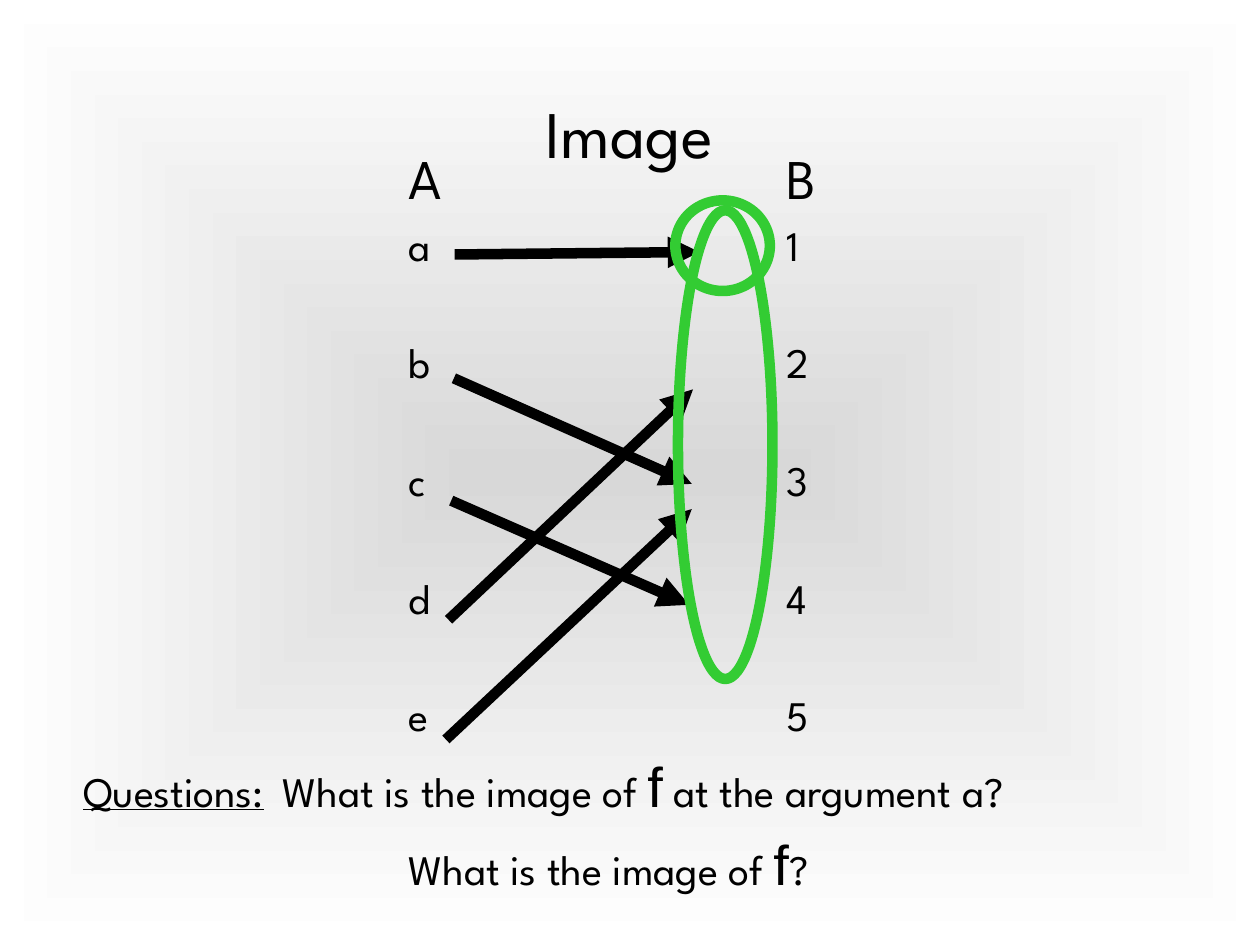
from lxml.etree import SubElement
from pptx import Presentation
from pptx.dml.color import RGBColor
from pptx.enum.shapes import MSO_CONNECTOR, MSO_SHAPE
from pptx.enum.text import MSO_ANCHOR, PP_ALIGN
from pptx.oxml.ns import qn
from pptx.util import Pt

BLACK = RGBColor(0x00, 0x00, 0x00)
GREEN = RGBColor(0x33, 0xCC, 0x33)
GRAY = RGBColor(0xD8, 0xD8, 0xD8)
WHITE = RGBColor(0xFF, 0xFF, 0xFF)
FONT = "League Spartan"
ARROWS = [
    (262.8, 145.4, 399.6, 144),
    (262.1, 217.4, 395.3, 276.5),
    (260.6, 287.3, 393.8, 345.6),
    (258.5, 352.1, 396, 222.5),
    (257, 420.5, 395.3, 290.9),
]
RINGS = [(387.4, 120.2, 54, 267.8), (385.9, 114.5, 54, 51.8)]


def set_back(slide):
    """Fill the background with a gradient from the centre outwards."""
    fill = slide.background.fill
    fill.gradient()
    for stop, color, pos in zip(fill.gradient_stops, (GRAY, WHITE), (0, 1)):
        stop.color.rgb = color
        stop.position = pos
    grad = slide.background._cSld.find(".//" + qn("a:gradFill"))
    grad.remove(grad.find(qn("a:lin")))
    shade = SubElement(grad, qn("a:path"), path="shape")
    SubElement(shade, qn("a:fillToRect"), l="50000", t="50000", r="50000", b="50000")


def style(run, size, name=FONT):
    """Set the font of a run."""
    run.font.size = Pt(size)
    run.font.name = name
    run.font.color.rgb = BLACK


def add_title(slide, text):
    """Place and format the title."""
    title = slide.shapes.title
    title.left, title.top, title.width, title.height = Pt(17.3), Pt(15.1), Pt(684.7), Pt(120.2)
    frame = title.text_frame
    frame.text = text
    frame.vertical_anchor = MSO_ANCHOR.MIDDLE
    frame.paragraphs[0].alignment = PP_ALIGN.CENTER
    style(frame.paragraphs[0].runs[0], 38)


def add_box(slide, left, width):
    """Add a text box in the body of the slide."""
    frame = slide.shapes.add_textbox(Pt(left), Pt(78.5), Pt(width), Pt(447.8)).text_frame
    frame.word_wrap = True
    frame.margin_left = frame.margin_right = Pt(21.6)
    return frame


def add_para(frame, parts, left, hang, gap):
    """Add a paragraph of (text, size, font) parts with an indent and a gap above."""
    para = frame.add_paragraph() if frame.text else frame.paragraphs[0]
    para.space_before = Pt(gap)
    props = para._p.get_or_add_pPr()
    props.set("marL", str(Pt(left)))
    props.set("indent", str(-Pt(hang)))
    for text, size, name in parts:
        run = para.add_run()
        run.text = text
        style(run, size, name)
    return para


def add_set(frame, head, items, left):
    """Add the name of a set and its elements below it."""
    add_para(frame, [(head, 32, FONT)], left, 0, 6.4)
    for num, item in enumerate(items):
        add_para(frame, [(item, 24, FONT)], left, 0, 38.4 if num else 4.8)


def add_asks(frame):
    """Add the two questions."""
    mark = ("f", 32, "Arial")
    ask = "What is the image of "
    first = [("Questions:", 24, FONT), (" \t" + ask, 24, FONT), mark,
             (" at the argument a?", 24, FONT)]
    para = add_para(frame, first, 42, 42, 6.4)
    para.runs[0].font.underline = True
    add_para(frame, [(ask, 24, FONT), mark, ("?", 24, FONT)], 186, 0, 6.4)


def add_arrow(slide, ends):
    """Add a thick black arrow."""
    line = slide.shapes.add_connector(MSO_CONNECTOR.STRAIGHT, *map(Pt, ends))
    line.line.width = Pt(6)
    line.line.color.rgb = BLACK
    edge = line.line._get_or_add_ln()
    edge.set("cap", "sq")
    SubElement(edge, qn("a:tailEnd"), type="triangle")
    SubElement(line._element.spPr, qn("a:effectLst"))


def add_ring(slide, box):
    """Add an unfilled green ellipse."""
    ring = slide.shapes.add_shape(MSO_SHAPE.OVAL, *map(Pt, box))
    ring.shadow.inherit = False
    ring.fill.background()
    ring.line.width = Pt(6)
    ring.line.color.rgb = GREEN


def main():
    """Build and save the slide."""
    deck = Presentation()
    deck.slide_width, deck.slide_height = Pt(720), Pt(540)
    slide = deck.slides.add_slide(deck.slide_layouts[5])
    set_back(slide)
    add_title(slide, "Image")
    frame = add_box(slide, 25.9, 679.7)
    add_set(frame, "A", "abcde", 186)
    add_asks(frame)
    add_set(add_box(slide, 427.9, 100), "B", "12345", 0)
    for ends in ARROWS:
        add_arrow(slide, ends)
    for box in RINGS:
        add_ring(slide, box)
    deck.save("out.pptx")


if __name__ == "__main__":
    main()
